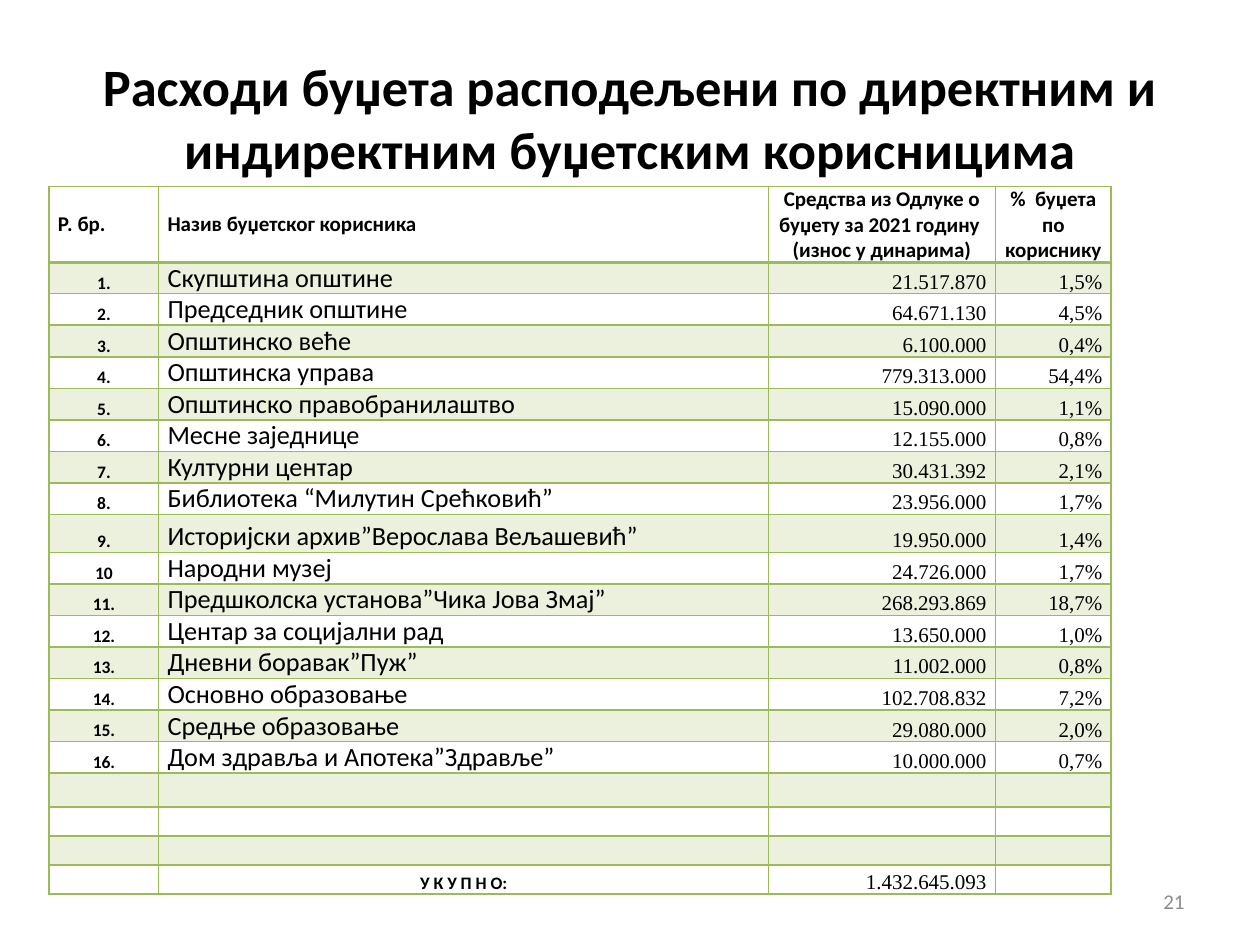
"""Build a slide with a table of budget spending by beneficiary."""
from typing import NamedTuple

from lxml.etree import SubElement
from pptx import Presentation
from pptx.dml.color import RGBColor
from pptx.enum.text import MSO_ANCHOR, PP_ALIGN
from pptx.oxml.ns import qn
from pptx.util import Inches, Pt

GREEN = RGBColor(0x9B, 0xBB, 0x59)
BLACK = RGBColor(0, 0, 0)
GREY = RGBColor(0x8C, 0x8C, 0x8C)


class Style(NamedTuple):
    size: float
    bold: bool = False
    align: PP_ALIGN = PP_ALIGN.LEFT
    font: str = "Calibri"
    color: RGBColor = BLACK
    anchor: MSO_ANCHOR = MSO_ANCHOR.BOTTOM


class Beneficiary(NamedTuple):
    number: str
    name: str
    amount: str
    share: str


TITLE = Style(30, True, PP_ALIGN.CENTER, anchor=MSO_ANCHOR.MIDDLE)
PAGE = Style(12, align=PP_ALIGN.RIGHT, color=GREY, anchor=MSO_ANCHOR.MIDDLE)
HEAD_LEFT = Style(12, True, anchor=MSO_ANCHOR.MIDDLE)
HEAD_CENTER = HEAD_LEFT._replace(align=PP_ALIGN.CENTER)
LABEL = Style(10, True, PP_ALIGN.CENTER)
NAME = Style(15)
FIGURE = Style(12, align=PP_ALIGN.RIGHT, font="Times New Roman")

HEADER_STYLES = (HEAD_LEFT, HEAD_LEFT, HEAD_CENTER, HEAD_CENTER)
BODY_STYLES = (LABEL, NAME, FIGURE, FIGURE)
TOTAL_STYLES = (LABEL, LABEL, FIGURE, FIGURE)

HEADER = Beneficiary("Р. бр.", "Назив буџетског корисника",
                     "Средства из Одлуке о буџету за 2021 годину  (износ у динарима)",
                     "%  буџета по кориснику")
BENEFICIARIES = [
    Beneficiary("1.", "Скупштина општине", "21.517.870", "1,5%"),
    Beneficiary("2.", "Председник општине", "64.671.130", "4,5%"),
    Beneficiary("3.", "Општинско веће", "6.100.000", "0,4%"),
    Beneficiary("4.", "Општинска управа", "779.313.000", "54,4%"),
    Beneficiary("5.", "Општинско правобранилаштво", "15.090.000", "1,1%"),
    Beneficiary("6.", "Месне заједнице", "12.155.000", "0,8%"),
    Beneficiary("7.", "Културни центар", "30.431.392", "2,1%"),
    Beneficiary("8.", "Библиотека “Милутин Срећковић”", "23.956.000", "1,7%"),
    Beneficiary("9.", "Историјски архив”Верослава Вељашевић”", "19.950.000", "1,4%"),
    Beneficiary("10", "Народни музеј", "24.726.000", "1,7%"),
    Beneficiary("11.", "Предшколска установа”Чика Јова Змај”", "268.293.869", "18,7%"),
    Beneficiary("12.", "Центар за социјални рад", "13.650.000", "1,0%"),
    Beneficiary("13.", "Дневни боравак”Пуж”", "11.002.000", "0,8%"),
    Beneficiary("14.", "Основно образовање", "102.708.832", "7,2%"),
    Beneficiary("15.", "Средње образовање", "29.080.000", "2,0%"),
    Beneficiary("16.", "Дом здравља и Апотека”Здравље”", "10.000.000", "0,7%"),
]
EMPTY = Beneficiary("", "", "", "")
TOTAL = Beneficiary("", "У К У П Н О:", "1.432.645.093", "")
ROWS = [HEADER, *BENEFICIARIES, EMPTY, EMPTY, EMPTY, TOTAL]

COLUMN_WIDTHS = (0.87, 4.84, 1.8, 0.92)
ROW_HEIGHTS = [0.6] + [0.25] * 8 + [0.3] + [0.25] * 7 + [0.27] + [0.23] * 3


def write(tf, text: str, style: Style) -> None:
    p = tf.paragraphs[0]
    p.alignment = style.align
    p.font.size = Pt(style.size)
    p.font.bold = style.bold
    p.font.name = style.font
    p.font.color.rgb = style.color
    if text:
        p.add_run().text = text
    else:
        p._p.get_or_add_endParaRPr().set("sz", str(style.size * 100))


def add_text(s, text: str, style: Style, left: float, top: float,
             width: float, height: float) -> None:
    tf = s.shapes.add_textbox(Inches(left), Inches(top),
                              Inches(width), Inches(height)).text_frame
    tf.word_wrap = True
    tf.vertical_anchor = style.anchor
    write(tf, text, style)


def set_border(cell, side: str, width: float) -> None:
    ln = SubElement(cell._tc.get_or_add_tcPr(), qn(f"a:{side}"), w=str(Pt(width)))
    fill = SubElement(ln, qn("a:solidFill"))
    SubElement(fill, qn("a:srgbClr"), val=str(GREEN))


def fill_cell(cell, shaded: bool) -> None:
    if not shaded:
        cell.fill.background()
        return
    cell.fill.solid()
    cell.fill.fore_color.rgb = GREEN
    color = cell._tc.tcPr.find(f"{qn('a:solidFill')}/{qn('a:srgbClr')}")
    SubElement(color, qn("a:alpha"), val="20000")


def draw_cell(cell, text: str, style: Style, row: int) -> None:
    cell.margin_left = cell.margin_right = Inches(0.07)
    cell.margin_top = cell.margin_bottom = 0
    cell.vertical_anchor = style.anchor
    write(cell.text_frame, text, style)
    for side in ("lnL", "lnR", "lnT", "lnB"):
        under_header = (row, side) in ((0, "lnB"), (1, "lnT"))
        set_border(cell, side, 2 if under_header else 1)
    fill_cell(cell, row % 2 == 1)


def styles_for(row: Beneficiary) -> tuple[Style, ...]:
    if row is HEADER:
        return HEADER_STYLES
    return BODY_STYLES if row in BENEFICIARIES else TOTAL_STYLES


def add_budget_table(s) -> None:
    table = s.shapes.add_table(
        len(ROWS), len(COLUMN_WIDTHS), Inches(0.39), Inches(1.48),
        Inches(sum(COLUMN_WIDTHS)), Inches(sum(ROW_HEIGHTS))).table
    table.first_row = table.horz_banding = False
    for column, width in zip(table.columns, COLUMN_WIDTHS):
        column.width = Inches(width)
    for i, (row, height) in enumerate(zip(ROWS, ROW_HEIGHTS)):
        table.rows[i].height = Inches(height)
        for j, (text, style) in enumerate(zip(row, styles_for(row))):
            draw_cell(table.cell(i, j), text, style, i)


def main() -> None:
    prs = Presentation()
    prs.slide_width, prs.slide_height = Inches(10), Inches(7.5)
    s = prs.slides.add_slide(prs.slide_layouts[6])
    add_text(s, "Расходи буџета расподељени по директним и индиректним "
             "буџетским корисницима", TITLE, 0.5, 0.3, 9, 1.25)
    add_budget_table(s)
    add_text(s, "21", PAGE, 7.17, 6.95, 2.33, 0.4)
    prs.save("out.pptx")


if __name__ == "__main__":
    main()
